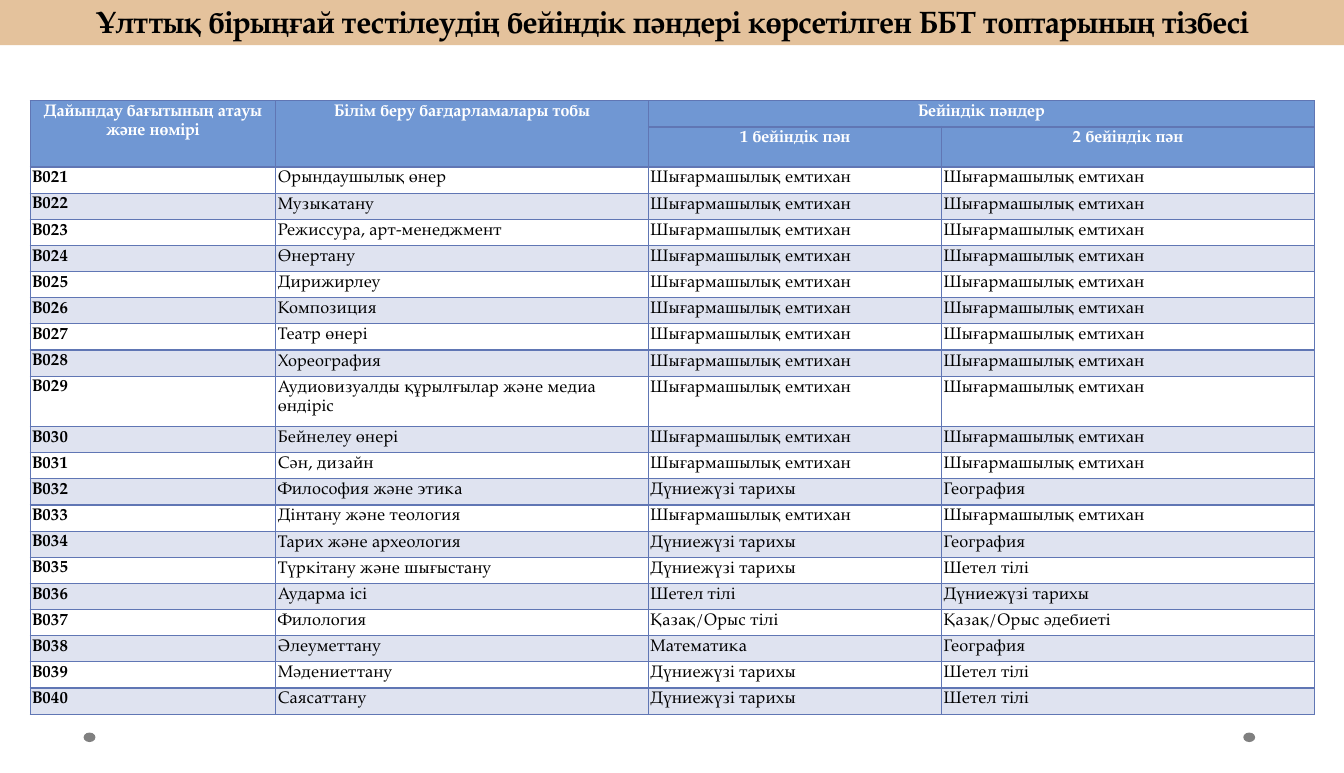
from lxml import etree
from pptx import Presentation
from pptx.dml.color import RGBColor
from pptx.enum.shapes import MSO_SHAPE
from pptx.enum.text import MSO_ANCHOR, MSO_AUTO_SIZE, PP_ALIGN
from pptx.oxml.ns import qn
from pptx.util import Cm, Pt

FONT = "TeX Gyre Pagella"
BLUE = "6076B4"
ART = "Шығармашылық емтихан"
HISTORY = "Дүниежүзі тарихы"
GEOGRAPHY = "География"
LANGUAGE = "Шетел тілі"

HEADERS = [
    ["Дайындау бағытының атауы және нөмірі", "Білім беру бағдарламалары тобы",
     "Бейіндік пәндер", ""],
    ["", "", "1 бейіндік пән", "2 бейіндік пән"],
]
# Programme group, first and second profile subject
GROUPS = [
    ("Орындаушылық өнер", ART, ART),
    ("Музыкатану", ART, ART),
    ("Режиссура, арт-менеджмент", ART, ART),
    ("Өнертану", ART, ART),
    ("Дирижирлеу", ART, ART),
    ("Композиция", ART, ART),
    ("Театр өнері", ART, ART),
    ("Хореография", ART, ART),
    ("Аудиовизуалды құрылғылар және медиа өндіріс", ART, ART),
    ("Бейнелеу өнері", ART, ART),
    ("Сән, дизайн", ART, ART),
    ("Философия және этика", HISTORY, GEOGRAPHY),
    ("Дінтану және теология", ART, ART),
    ("Тарих және археология", HISTORY, GEOGRAPHY),
    ("Түркітану және шығыстану", HISTORY, LANGUAGE),
    ("Аударма ісі", LANGUAGE, HISTORY),
    ("Филология", "Қазақ/Орыс тілі", "Қазақ/Орыс әдебиеті"),
    ("Әлеуметтану", "Математика", GEOGRAPHY),
    ("Мәдениеттану", HISTORY, LANGUAGE),
    ("Саясаттану", HISTORY, LANGUAGE),
]


def paint(fill, color, alpha=None):
    fill.solid()
    fill.fore_color.rgb = RGBColor.from_string(color)
    if alpha:
        clr = fill._xPr.find(".//" + qn("a:srgbClr"))
        etree.SubElement(clr, qn("a:alpha")).set("val", str(alpha * 1000))


def add_borders(cell, bottom):
    tcPr = cell._tc.get_or_add_tcPr()
    for i, side in enumerate("LRTB"):
        ln = etree.Element(qn("a:ln" + side))
        ln.set("w", str(Pt(bottom if side == "B" else 1)))
        solid = etree.SubElement(ln, qn("a:solidFill"))
        etree.SubElement(solid, qn("a:srgbClr")).set("val", BLUE)
        tcPr.insert(i, ln)


prs = Presentation()
prs.slide_width, prs.slide_height = Cm(33.91), Cm(19.51)
s = prs.slides.add_slide(prs.slide_layouts[5])

# Title band
title = s.shapes.title
title.left, title.top, title.width, title.height = Cm(0), Cm(-0.05), Cm(33.95), Cm(1.19)
paint(title.fill, "E4C29C")
tf = title.text_frame
tf.text = "Ұлттық бірыңғай тестілеудің бейіндік пәндері көрсетілген ББТ топтарының тізбесі"
tf.auto_size = MSO_AUTO_SIZE.NONE
tf.word_wrap = True
tf.vertical_anchor = MSO_ANCHOR.TOP
p = tf.paragraphs[0]
p.alignment = PP_ALIGN.CENTER
p.font.name, p.font.size, p.font.bold = FONT, Pt(22), True
p.font.color.rgb = RGBColor.from_string("000000")

# Footer dots
for x in (2.11, 31.37):
    dot = s.shapes.add_shape(MSO_SHAPE.OVAL, Cm(x), Cm(18.49), Cm(0.3), Cm(0.24))
    dot.shadow.inherit = False
    paint(dot.fill, "808080")
    dot.line.fill.background()

# Table grid
rows = HEADERS + [[f"В{n:03}", *group] for n, group in enumerate(GROUPS, 21)]
widths = [6.2, 9.4, 7.4, 9.4]
heights = [0.66] * len(rows)
heights[1] = 1.01
heights[10] = 1.27
table = s.shapes.add_table(len(rows), 4, Cm(0.76), Cm(2.54),
                           Cm(sum(widths)), Cm(sum(heights))).table
table.first_row = table.horz_banding = False
for column, width in zip(table.columns, widths):
    column.width = Cm(width)
for row, height in zip(table.rows, heights):
    row.height = Cm(height)

# Cells
for i, texts in enumerate(rows):
    header = i < len(HEADERS)
    for j, text in enumerate(texts):
        cell = table.cell(i, j)
        cell.margin_left = cell.margin_right = Cm(0.05)
        cell.margin_top = cell.margin_bottom = Cm(0.03)
        if header:
            paint(cell.fill, "7097D3")
        elif i % 2:
            paint(cell.fill, BLUE, 20)
        else:
            cell.fill.background()
        add_borders(cell, 2 if i == 0 else 1)
        p = cell.text_frame.paragraphs[0]
        p.line_spacing = 1.15
        p.alignment = PP_ALIGN.CENTER if header else PP_ALIGN.LEFT
        p.font.name, p.font.size = FONT, Pt(12)
        p.font.bold = header or j == 0
        p.font.color.rgb = RGBColor.from_string("FFFFFF" if header else "000000")
        if text:
            r = p.add_run()
            r.text = text
            r._r.get_or_add_rPr().set("spc", "10")

# Merged header cells
table.cell(0, 0).merge(table.cell(1, 0))
table.cell(0, 1).merge(table.cell(1, 1))
table.cell(0, 2).merge(table.cell(0, 3))

prs.save("out.pptx")
